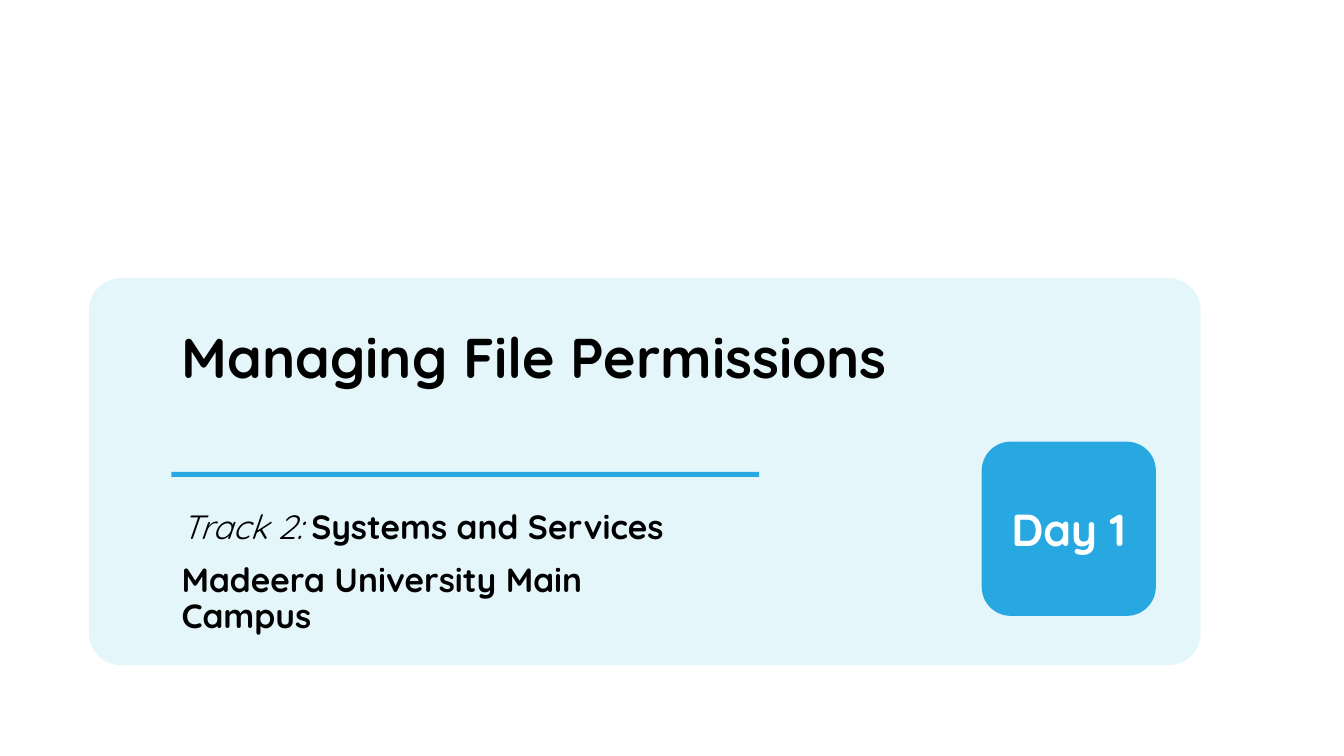
from pptx import Presentation
from pptx.dml.color import RGBColor
from pptx.enum import shapes, text
from pptx.util import Cm, Pt

COLORS = {"panel": "E5F6FB", "accent": "27A8E0", "ink": "000000", "light": "FFFFFF"}
FONT = "Quicksand"


def add_block(kind, left, top, width, height, color):
    shape = slide.shapes.add_shape(kind, Cm(left), Cm(top), Cm(width), Cm(height))
    shape.shadow.inherit = False
    shape.fill.solid()
    shape.fill.fore_color.rgb = RGBColor.from_string(COLORS[color])
    shape.line.fill.background()
    return shape


def add_run(paragraph, words, size, color="ink", bold=True, italic=False):
    run = paragraph.add_run()
    run.text = words
    run.font.name = FONT
    run.font.size = Pt(size)
    run.font.bold = bold
    run.font.italic = italic
    run.font.color.rgb = RGBColor.from_string(COLORS[color])


presentation = Presentation()
presentation.slide_width = Cm(33.87)
presentation.slide_height = Cm(19.05)
slide = presentation.slides.add_slide(presentation.slide_layouts[0])
title, details = slide.placeholders

panel = add_block(shapes.MSO_SHAPE.ROUNDED_RECTANGLE, 2.24, 7.01, 28.02, 9.75, "panel")
panel.adjustments[0] = 0.083
title.element.addprevious(panel.element)

for placeholder, top, width, height in [(title, 8.2, 18.36, 3.5), (details, 12.73, 13.97, 2.49)]:
    placeholder.left, placeholder.top = Cm(4.32), Cm(top)
    placeholder.width, placeholder.height = Cm(width), Cm(height)
    frame = placeholder.text_frame
    frame.word_wrap = True
    frame.auto_size = text.MSO_AUTO_SIZE.NONE
    frame.vertical_anchor = text.MSO_ANCHOR.TOP

heading = title.text_frame.paragraphs[0]
add_run(heading, "Managing File Permissions", 40)
track = details.text_frame.paragraphs[0]
add_run(track, "Track 2: ", 24, bold=False, italic=True)
add_run(track, "Systems and Services", 24)
venue = details.text_frame.add_paragraph()
add_run(venue, "Madeera University Main Campus", 24)

for paragraph in (heading, track, venue):
    paragraph.alignment = text.PP_ALIGN.LEFT
    paragraph.line_spacing = 0.9
    paragraph.space_before = Pt(0)
venue.space_before = Pt(12)

add_block(shapes.MSO_SHAPE.RECTANGLE, 4.32, 11.89, 14.81, 0.13, "accent")

badge = add_block(shapes.MSO_SHAPE.ROUNDED_RECTANGLE, 24.74, 11.13, 4.39, 4.39, "accent")
badge.text_frame.vertical_anchor = text.MSO_ANCHOR.MIDDLE
day = badge.text_frame.paragraphs[0]
day.alignment = text.PP_ALIGN.CENTER
add_run(day, "Day 1", 32, "light")

presentation.save("out.pptx")
